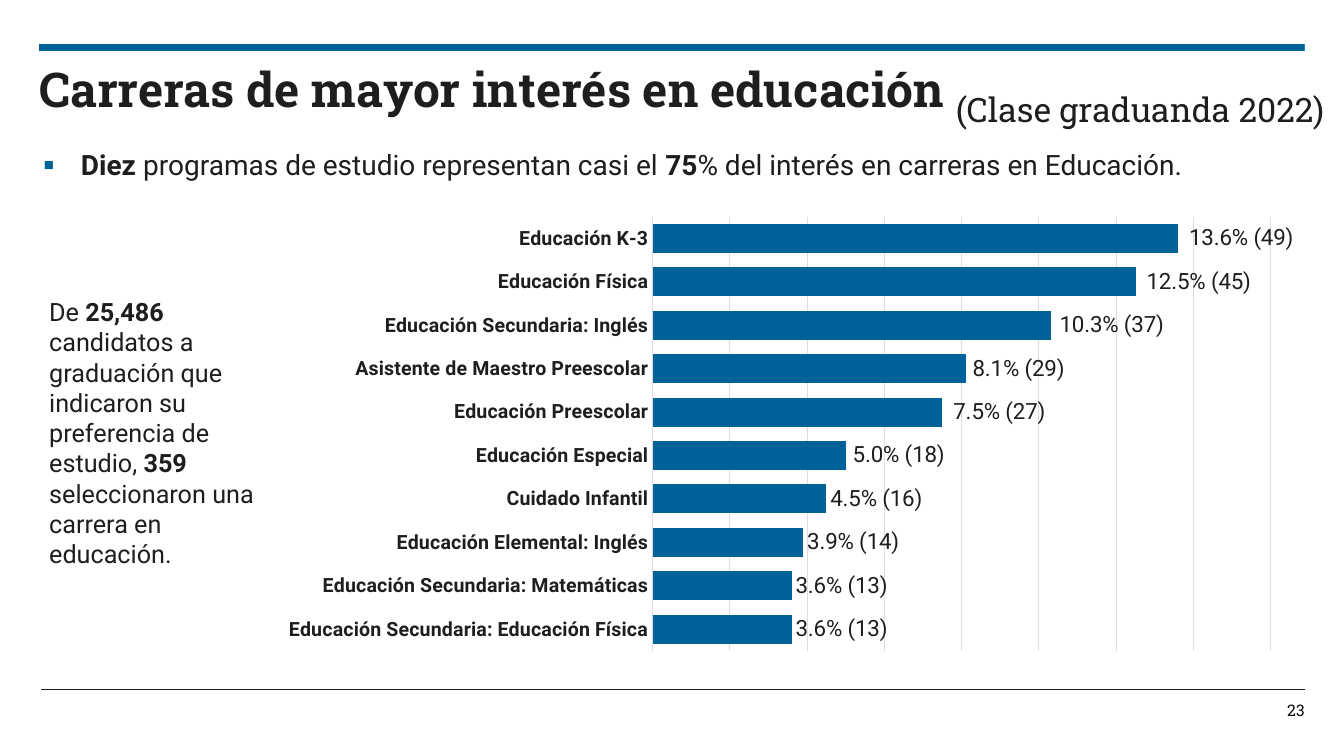
from dataclasses import dataclass

from lxml import etree
from pptx import Presentation
from pptx.chart.data import CategoryChartData
from pptx.dml.color import RGBColor
from pptx.enum.chart import XL_CHART_TYPE as ChartType
from pptx.enum.chart import XL_LABEL_POSITION as LabelPos
from pptx.enum.chart import XL_TICK_LABEL_POSITION as TickLabelPos
from pptx.enum.chart import XL_TICK_MARK as TickMark
from pptx.enum.shapes import MSO_CONNECTOR as Connector
from pptx.enum.text import MSO_ANCHOR as Anchor
from pptx.enum.text import MSO_AUTO_SIZE as AutoSize
from pptx.enum.text import PP_ALIGN as Align
from pptx.oxml.ns import qn
from pptx.util import Cm, Pt

COLORS = {"blue": "006298", "sky": "009CDE", "ink": "1E1E1E",
          "number": "080808", "grid": "DDDDDD"}
SANS, SLAB = "Roboto", "Roboto Slab"


@dataclass(frozen=True)
class Rule:
    left: float
    right: float
    top: float
    color: str
    width: float


@dataclass(frozen=True)
class Program:
    name: str
    share: float
    count: int
    nudge: float = 0  # label shift, as a fraction of the chart width


RULES = [
    Rule(0.99, 32.87, 1.19, "sky", 5.25),
    Rule(1.04, 32.87, 17.37, "ink", 0.25),
    Rule(0.99, 32.84, 1.19, "blue", 5.25),
]

PROGRAMS = [
    Program("Educación Secundaria: Educación Física", 0.036, 13),
    Program("Educación Secundaria: Matemáticas", 0.036, 13),
    Program("Educación Elemental: Inglés", 0.039, 14),
    Program("Cuidado Infantil", 0.045, 16),
    Program("Educación Especial", 0.05, 18, 0.003),
    Program("Educación Preescolar", 0.075, 27, 0.007),
    Program("Asistente de Maestro Preescolar", 0.081, 29, 0.003),
    Program("Educación Secundaria: Inglés", 0.103, 37, 0.005),
    Program("Educación Física", 0.125, 45, 0.007),
    Program("Educación K-3", 0.136, 49, 0.007),
]


def rgb(name: str) -> RGBColor:
    return RGBColor.from_string(COLORS[name])


def style_font(font, size: float, name: str = SANS, color: str = "ink",
               bold: bool = False) -> None:
    font.size, font.name, font.bold = Pt(size), name, bold
    font.color.rgb = rgb(color)


def place(s, left: float, top: float, width: float, height: float):
    s.left, s.top, s.width, s.height = map(Cm, (left, top, width, height))
    return s


def write(tf, text: str, *, size: float, font: str = SANS, color: str = "ink",
          bold: bool = False, align=Align.LEFT, anchor=Anchor.TOP,
          wrap: bool = True, insets=(0, 0, 0.2, 0), bullet: str = "") -> None:
    """Fill a text frame; **marked** stretches switch the weight."""
    tf.word_wrap, tf.auto_size, tf.vertical_anchor = wrap, AutoSize.NONE, anchor
    (tf.margin_left, tf.margin_top,
     tf.margin_right, tf.margin_bottom) = map(Cm, insets)
    p = tf.paragraphs[0]
    p.alignment, p.space_before = align, Pt(0)
    if bullet:
        add_bullet(p, bullet)
    for i, part in enumerate(text.split("**")):
        if part:
            r = p.add_run()
            r.text = part
            style_font(r.font, size, font, color, bold != bool(i % 2))


def add_bullet(p, char: str) -> None:
    pPr = p._p.get_or_add_pPr()
    pPr.set("marL", str(Cm(0.95)))
    pPr.set("indent", str(-Cm(0.95)))
    clr = etree.SubElement(pPr, qn("a:buClr"))
    etree.SubElement(clr, qn("a:srgbClr"), val=COLORS["blue"])
    etree.SubElement(pPr, qn("a:buFont"), typeface=SANS)
    etree.SubElement(pPr, qn("a:buChar"), char=char)


def add_rule(slide, rule: Rule) -> None:
    s = slide.shapes.add_connector(Connector.STRAIGHT, Cm(rule.left), Cm(rule.top),
                                   Cm(rule.right), Cm(rule.top))
    s.line.color.rgb, s.line.width = rgb(rule.color), Pt(rule.width)
    etree.SubElement(s._element.spPr, qn("a:effectLst"))


def set_layout(parent, index: int, **settings) -> None:
    """Give a chart element a manual layout as its child number index."""
    old = parent.find(qn("c:layout"))
    if old is not None:
        parent.remove(old)
    layout = etree.Element(qn("c:layout"))
    manual = etree.SubElement(layout, qn("c:manualLayout"))
    for tag, value in settings.items():
        etree.SubElement(manual, qn(f"c:{tag}"), val=str(value))
    parent.insert(index, layout)


def add_program_chart(slide) -> None:
    data = CategoryChartData(number_format="0.0%")
    data.categories = [program.name for program in PROGRAMS]
    data.add_series("Series 1", [program.share for program in PROGRAMS])
    chart = slide.shapes.add_chart(ChartType.BAR_CLUSTERED, Cm(6.99), Cm(5.05),
                                   Cm(25.6), Cm(11.73), data).chart
    chart.has_legend = chart.has_title = False
    style_font(chart.font, 10)

    cat = chart.category_axis
    cat.major_tick_mark = cat.minor_tick_mark = TickMark.NONE
    cat.tick_label_position = TickLabelPos.NEXT_TO_AXIS
    style_font(cat.tick_labels.font, 14, bold=True)
    val = chart.value_axis
    val.visible, val.has_major_gridlines = False, True
    val.major_tick_mark = val.minor_tick_mark = TickMark.NONE
    val.tick_labels.number_format = "0.0%"
    val.tick_labels.number_format_is_linked = False
    val.minimum_scale, val.maximum_scale, val.major_unit = 0, 0.16, 0.02
    for line in (cat.format.line, val.major_gridlines.format.line):
        line.color.rgb, line.width = rgb("grid"), Pt(0.75)

    plot = chart.plots[0]
    plot.gap_width, plot.vary_by_categories = 50, False
    series = plot.series[0]
    series.format.fill.solid()
    series.format.fill.fore_color.rgb = rgb("blue")
    labels = series.data_labels
    labels.show_value, labels.position = True, LabelPos.OUTSIDE_END
    labels.number_format, labels.number_format_is_linked = "0.0%", False
    style_font(labels.font, 16, bold=True)
    for i, program in enumerate(PROGRAMS):
        label = series.points[i].data_label
        tf = label.text_frame
        tf.word_wrap = False
        r = tf.paragraphs[0].add_run()
        r.text = f"{program.share:.1%} ({program.count})"
        style_font(r.font, 16)
        label.position = LabelPos.OUTSIDE_END

    for element, program in zip(chart.element.iter(qn("c:dLbl")), PROGRAMS):
        if program.nudge:
            set_layout(element, 1, x=program.nudge, y=0)
    set_layout(chart.element.find(".//" + qn("c:plotArea")), 0,
               layoutTarget="inner", xMode="edge", yMode="edge",
               x=0.37, y=0.035, w=0.61, h=0.933)


def add_text(slide, box: tuple, text: str, **fmt) -> None:
    s = slide.shapes.add_textbox(*map(Cm, box))
    write(s.text_frame, text, **fmt)


def main() -> None:
    prs = Presentation()
    prs.slide_width, prs.slide_height = Cm(33.86), Cm(19.05)
    slide = prs.slides.add_slide(prs.slide_layouts[1])

    for rule in RULES:
        add_rule(slide, rule)
    title = place(slide.shapes.title, 0.99, 1.5, 31.34, 1.14)
    write(title.text_frame, "Carreras de mayor interés en educación",
          size=34.2, font=SLAB, bold=True)
    body = place(slide.placeholders[1], 0.99, 3.61, 29.08, 1.07)
    write(body.text_frame,
          "**Diez **programas de estudio representan casi el **75**% del interés "
          "en carreras en Educación.",
          size=20, wrap=False, insets=(0.1, 0.1, 0.1, 0.1), bullet="▪")
    add_program_chart(slide)
    add_text(slide, (24.08, 2.24, 9.53, 1.14), "(Clase graduanda 2022)",
             size=24, font=SLAB)
    add_text(slide, (0.99, 7.34, 5.94, 7.19),
             "De **25,486** candidatos a graduación que indicaron su preferencia "
             "de estudio, **359** seleccionaron una carrera en educación.",
             size=18, insets=(0.25, 0.13, 0.25, 0.13))
    add_text(slide, (31.57, 17.68, 1.3, 0.41), "23", size=11.4, font=SLAB,
             color="number", align=Align.RIGHT, anchor=Anchor.MIDDLE,
             wrap=False, insets=(0, 0, 0, 0))
    prs.save("out.pptx")


if __name__ == "__main__":
    main()
